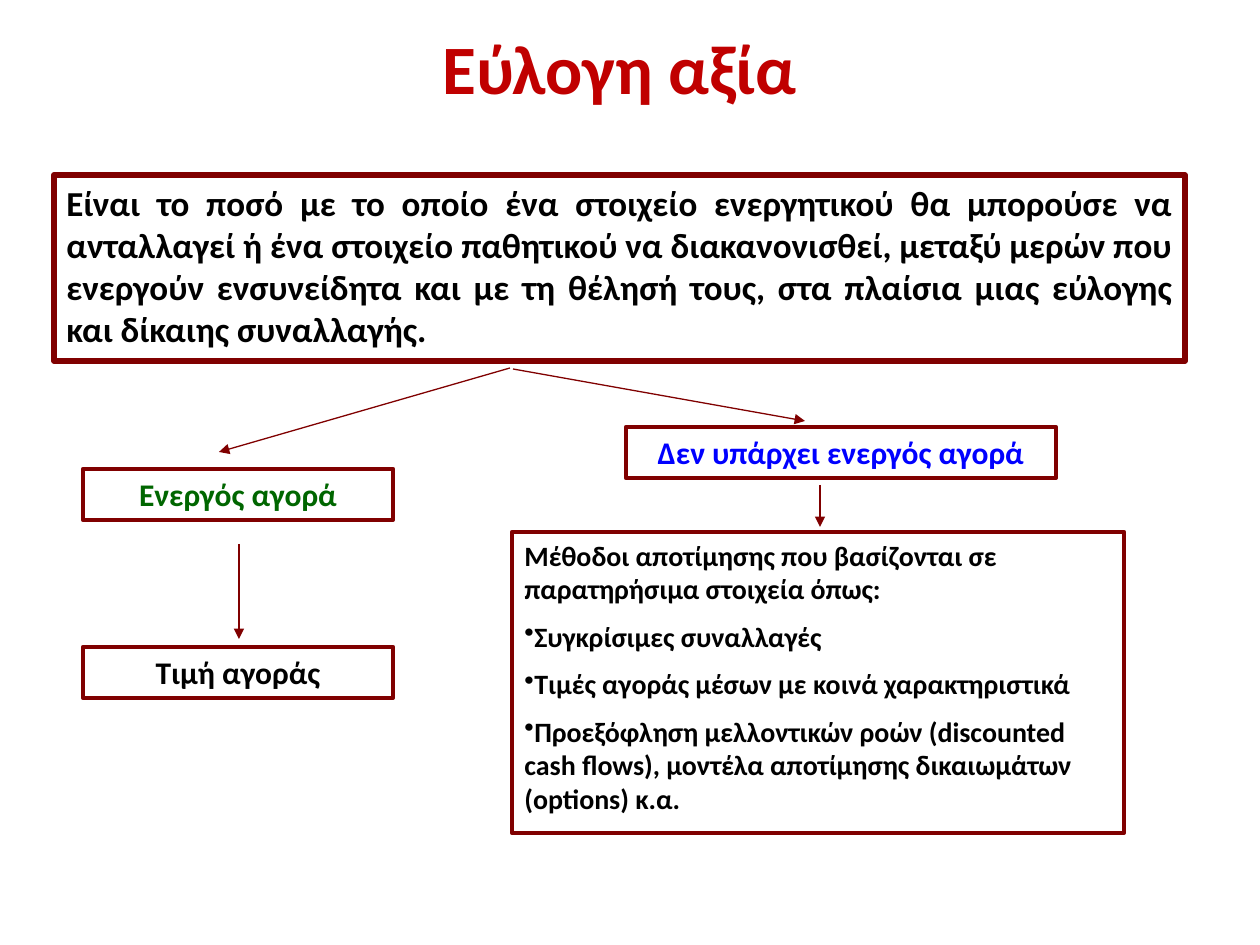
"""Build the fair value slide."""
from lxml import etree
from pptx import Presentation, util as u
from pptx.dml.color import RGBColor
from pptx.enum import shapes, text
from pptx.oxml import ns

SCALE = 914400 / 126
FONT = "Calibri"
COLOURS = {"title": "C00000", "border": "800000", "active": "006600",
           "inactive": "0000FF", "body": "000000"}
ALIGN = text.PP_ALIGN

DEFINITION = (
    "Είναι το ποσό με το οποίο ένα στοιχείο ενεργητικού θα μπορούσε να "
    "ανταλλαγεί ή ένα στοιχείο παθητικού να διακανονισθεί, μεταξύ μερών που "
    "ενεργούν ενσυνείδητα και με τη θέλησή τους, στα πλαίσια μιας εύλογης "
    "και δίκαιης συναλλαγής.")
METHODS = [
    "Μέθοδοι αποτίμησης που βασίζονται σε παρατηρήσιμα στοιχεία όπως:",
    "Συγκρίσιμες συναλλαγές",
    "Τιμές αγοράς μέσων με κοινά χαρακτηριστικά",
    "Προεξόφληση μελλοντικών ροών (discounted cash flows), "
    "μοντέλα αποτίμησης δικαιωμάτων (options) κ.α."]


def px(*lengths):
    """Turn pixel lengths into EMU."""
    return [u.Emu(round(length * SCALE)) for length in lengths]


def colour(name):
    """Look up a named colour."""
    return RGBColor.from_string(COLOURS[name])


def add_span(para, words, size, name):
    """Add one bold run to a paragraph."""
    span = para.add_run()
    span.text = words
    span.font.name = FONT
    span.font.size = u.Pt(size)
    span.font.bold = True
    span.font.color.rgb = colour(name)


def add_bullet(para):
    """Give a paragraph an unindented round bullet."""
    props = para._p.get_or_add_pPr()
    props.set("marL", "0")
    props.set("indent", "0")
    etree.SubElement(props, ns.qn("a:buChar")).set("char", "•")


def add_title(page, words):
    """Fill and place the title placeholder."""
    title = page.shapes.title
    title.left, title.top, title.width, title.height = px(63, 38, 1113, 58)
    frame = title.text_frame
    frame.vertical_anchor = text.MSO_ANCHOR.MIDDLE
    frame.auto_size = text.MSO_AUTO_SIZE.NONE
    para = frame.paragraphs[0]
    para.alignment = ALIGN.CENTER
    add_span(para, words, 39.6, "title")


def add_box(page, place, lines, size=18, name="body", align=ALIGN.CENTER, border=2.5):
    """Add a bordered box whose lines after the first are bulleted."""
    box = page.shapes.add_shape(shapes.MSO_SHAPE.RECTANGLE, *px(*place))
    box.shadow.inherit = False
    box.fill.background()
    box.line.color.rgb = colour("border")
    box.line.width = u.Pt(border)
    frame = box.text_frame
    frame.word_wrap = True
    frame.vertical_anchor = text.MSO_ANCHOR.TOP
    for index, words in enumerate(lines):
        para = frame.add_paragraph() if index else frame.paragraphs[0]
        para.alignment = align
        if index:
            para.space_before = u.Pt(size / 2)
            add_bullet(para)
        add_span(para, words, size, name)


def add_arrow(page, *ends):
    """Add a thin straight arrow between two points."""
    arrow = page.shapes.add_connector(shapes.MSO_CONNECTOR.STRAIGHT, *px(*ends))
    arrow.line.color.rgb = colour("border")
    arrow.line.width = u.Pt(0.75)
    etree.SubElement(arrow.line._get_or_add_ln(), ns.qn("a:tailEnd")).set("type", "triangle")
    etree.SubElement(arrow._element.spPr, ns.qn("a:effectLst"))


def main():
    """Build and save the deck."""
    deck = Presentation()
    deck.slide_width, deck.slide_height = px(1260, 945)
    page = deck.slides.add_slide(deck.slide_layouts[5])
    add_title(page, "Εύλογη αξία")
    add_box(page, (83, 469, 310, 51), ["Ενεργός αγορά"], name="active")
    add_box(page, (626, 427, 430, 51), ["Δεν υπάρχει ενεργός αγορά"], name="inactive")
    add_box(page, (512, 532, 612, 301), METHODS, size=16, align=ALIGN.LEFT)
    add_box(page, (54, 175, 1131, 186), [DEFINITION], size=20, align=ALIGN.JUSTIFY, border=3.25)
    add_box(page, (83, 647, 310, 51), ["Τιμή αγοράς"])
    for ends in ((239, 544, 239, 639), (820, 485, 820, 527),
                 (510, 368, 219, 452), (513, 369, 805, 421)):
        add_arrow(page, *ends)
    deck.save("out.pptx")


if __name__ == "__main__":
    main()
